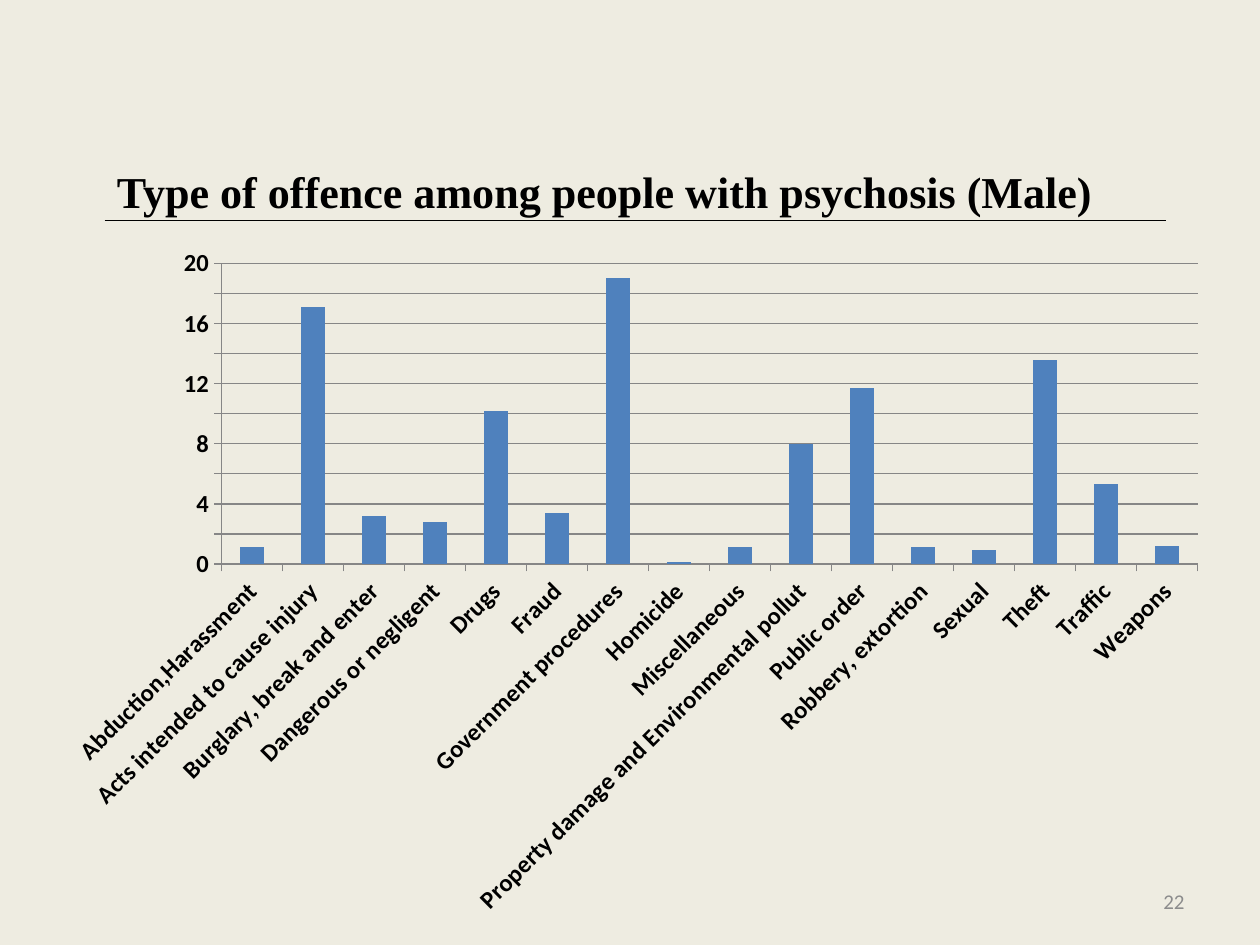
from lxml import etree
from pptx import Presentation
from pptx import util as u
from pptx.chart.data import CategoryChartData
from pptx.dml.color import RGBColor
from pptx.enum import chart as charts, shapes, text
from pptx.oxml import ns, parse_xml

COLORS = {"paper": "EEECE1", "ink": "000000", "muted": "8C8C8C",
          "bar": "4F81BD", "grid": "868686"}

OFFENCES = {
    "Abduction,Harassment": 1.1,
    "Acts intended to cause injury": 17.1,
    "Burglary, break and enter": 3.2,
    "Dangerous or negligent": 2.8,
    "Drugs": 10.2,
    "Fraud": 3.4,
    "Government procedures": 19,
    "Homicide": 0.1,
    "Miscellaneous": 1.1,
    "Property damage and Environmental pollut": 8,
    "Public order": 11.7,
    "Robbery, extortion": 1.1,
    "Sexual": 0.9,
    "Theft": 13.6,
    "Traffic": 5.3,
    "Weapons": 1.2,
}


def rgb(name):
    return RGBColor.from_string(COLORS[name])


def set_font(font, name, size, color, bold=False):
    font.name, font.size, font.bold = name, u.Pt(size), bold
    font.color.rgb = rgb(color)


def add_text(page, words, left, top, width, height, *, font, size, color,
             bold=False, align=text.PP_ALIGN.LEFT):
    box = page.shapes.add_textbox(*map(u.Inches, (left, top, width, height)))
    frame = box.text_frame
    frame.word_wrap = True
    frame.vertical_anchor = text.MSO_ANCHOR.MIDDLE
    para = frame.paragraphs[0]
    para.alignment = align
    span = para.add_run()
    span.text = words
    set_font(span.font, font, size, color, bold)


def add_rule(page, left, right, y):
    rule = page.shapes.add_connector(
        shapes.MSO_CONNECTOR.STRAIGHT,
        u.Inches(left), u.Inches(y), u.Inches(right), u.Inches(y))
    rule.line.color.rgb = rgb("ink")
    rule.line.width = u.Pt(0.75)
    etree.SubElement(rule._element.spPr, ns.qn("a:effectLst"))


def style_axis(axis):
    axis.major_tick_mark = charts.XL_TICK_MARK.OUTSIDE
    axis.minor_tick_mark = charts.XL_TICK_MARK.NONE
    axis.format.line.color.rgb = rgb("grid")
    axis.format.line.width = u.Pt(0.75)
    set_font(axis.tick_labels.font, "Calibri", 14, "ink", bold=True)


def place_plot(chart, **fractions):
    """Fix the inner plot area as fractions of the chart."""
    plot_area = chart._chartSpace.chart.plotArea
    for old in plot_area.findall(ns.qn("c:layout")):
        plot_area.remove(old)
    sizes = "".join(f'<c:{key} val="{value}"/>' for key, value in fractions.items())
    plot_area.insert(0, parse_xml(
        f'<c:layout {ns.nsdecls("c")}><c:manualLayout>'
        '<c:layoutTarget val="inner"/><c:xMode val="edge"/><c:yMode val="edge"/>'
        f'{sizes}</c:manualLayout></c:layout>'))


def add_column_chart(page, values, left, top, width, height):
    data = CategoryChartData()
    data.categories = list(values)
    data.add_series("Series 1", list(values.values()))
    chart = page.shapes.add_chart(
        charts.XL_CHART_TYPE.COLUMN_CLUSTERED,
        *map(u.Inches, (left, top, width, height)), data).chart
    chart.has_legend = False
    chart.has_title = False
    set_font(chart.font, "Calibri", 10, "ink")

    # Columns
    plot = chart.plots[0]
    plot.gap_width = 150
    plot.vary_by_categories = False
    fill = plot.series[0].format.fill
    fill.solid()
    fill.fore_color.rgb = rgb("bar")

    # Axes, with slanted category names
    style_axis(chart.category_axis)
    style_axis(chart.value_axis)
    body = chart.category_axis._element.find(ns.qn("c:txPr")).find(ns.qn("a:bodyPr"))
    body.set("rot", str(-45 * 60000))
    scale = chart.value_axis
    scale.minimum_scale, scale.maximum_scale, scale.major_unit = 0, 20, 2
    scale.has_major_gridlines = True
    scale.major_gridlines.format.line.color.rgb = rgb("grid")
    scale.major_gridlines.format.line.width = u.Pt(0.75)
    place_plot(chart, x=0.143, y=0.042, w=0.834, h=0.433)


def main():
    deck = Presentation()
    deck.slide_width, deck.slide_height = u.Inches(10), u.Inches(7.5)
    page = deck.slides.add_slide(deck.slide_layouts[6])
    page.background.fill.solid()
    page.background.fill.fore_color.rgb = rgb("paper")

    # Heading
    add_rule(page, 0.83, 9.25, 1.75)
    add_text(page, "Type of offence among people with psychosis (Male)",
             0.83, 1.18, 8.5, 0.67,
             font="Times New Roman", size=25.2, color="ink", bold=True)

    # Page number
    add_text(page, "22", 7.17, 6.95, 2.33, 0.4, font="Calibri", size=12,
             color="muted", align=text.PP_ALIGN.RIGHT)

    # Offence shares
    add_column_chart(page, OFFENCES, 0.43, 1.86, 9.29, 5.51)
    deck.save("out.pptx")


if __name__ == "__main__":
    main()
